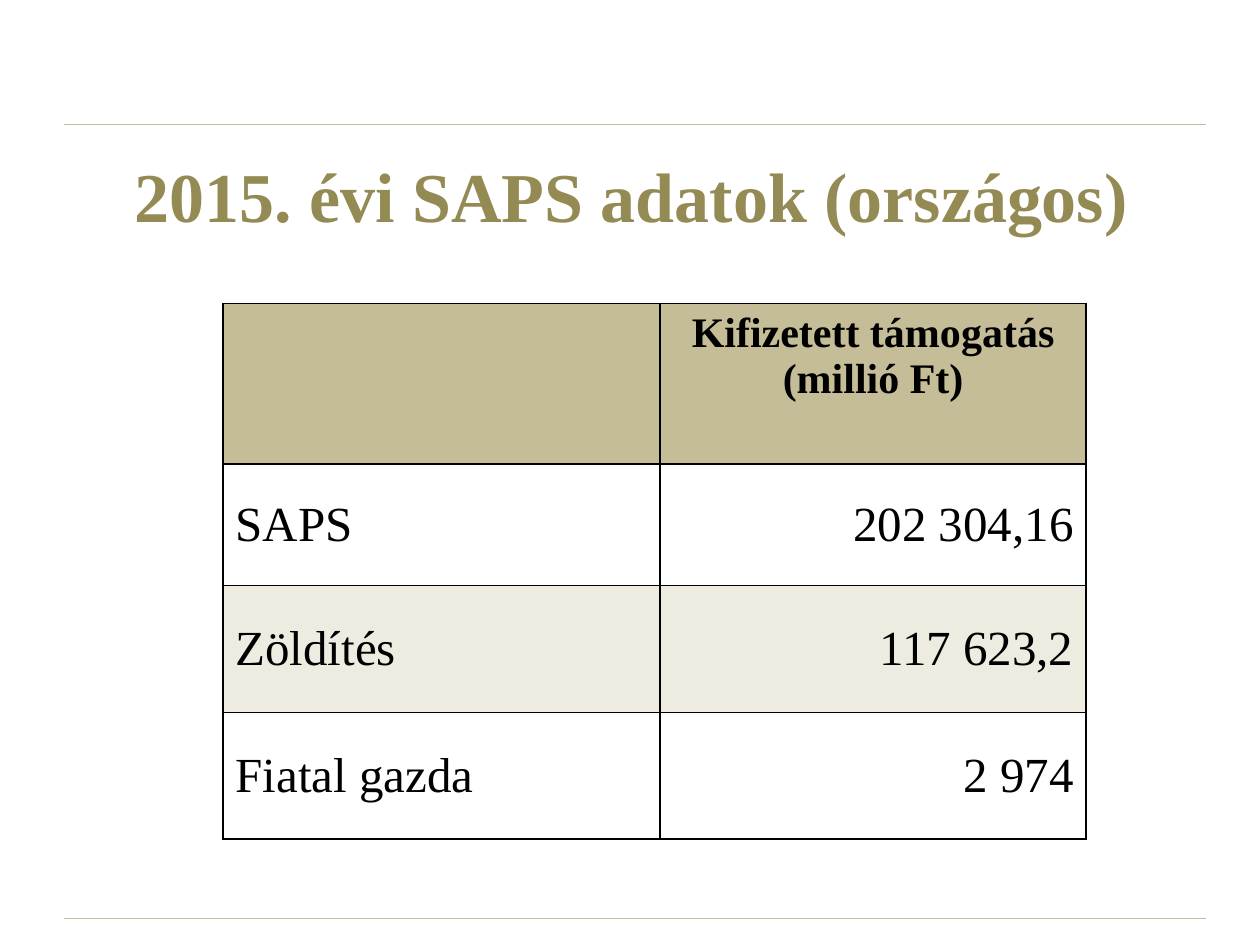
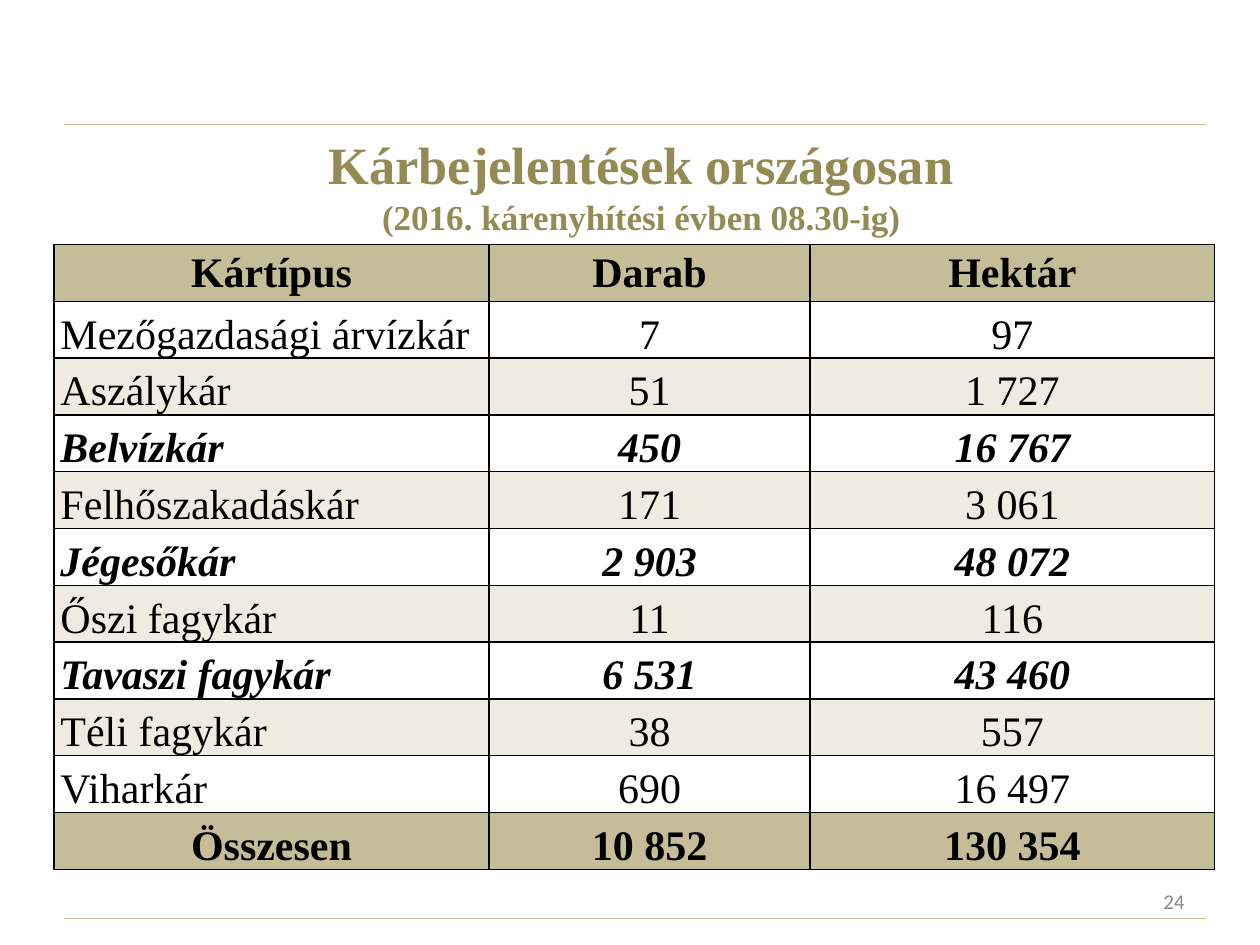
from dataclasses import dataclass

from lxml import etree
from pptx import Presentation
from pptx import util as u
from pptx.dml.color import RGBColor
from pptx.enum import shapes, text
from pptx.oxml import ns

LEFT, CENTER, RIGHT = text.PP_ALIGN.LEFT, text.PP_ALIGN.CENTER, text.PP_ALIGN.RIGHT
TOP, MIDDLE, BOTTOM = (text.MSO_ANCHOR.TOP, text.MSO_ANCHOR.MIDDLE,
                       text.MSO_ANCHOR.BOTTOM)


@dataclass(frozen=True)
class Theme:
    serif: str = "Times New Roman"
    sans: str = "Calibri"
    title: str = "948A54"
    band: str = "C4BD97"
    stripe: str = "EEECE1"
    ink: str = "000000"
    muted: str = "8C8C8C"
    title_size: int = 40
    damage_title_size: int = 30
    subtitle_size: int = 20
    body_size: int = 28
    table_size: int = 24
    number_size: int = 12
    rule_width: float = 0.75
    border_width: int = 1


@dataclass(frozen=True)
class CellLook:
    align: int
    anchor: int
    size: int
    bold: bool = False
    italic: bool = False
    fill: str = ""


THEME = Theme()
WIDTH, HEIGHT = u.Inches(10), u.Inches(7.5)
COLUMNS, ROWS = 100, 75
RULE_LEFT, RULE_RIGHT = 5.1, 95.7
RULE_ROWS = (9.9, 72.9)

PAYMENTS = [
    ("", "Kifizetett támogatás (millió Ft)"),
    ("SAPS", "202 304,16"),
    ("Zöldítés", "117 623,2"),
    ("Fiatal gazda", "2 974"),
]
DAMAGES = [
    ("Kártípus", "Darab", "Hektár"),
    ("Mezőgazdasági árvízkár", "7", "97"),
    ("Aszálykár", "51", "1 727"),
    ("Belvízkár", "450", "16 767"),
    ("Felhőszakadáskár", "171", "3 061"),
    ("Jégesőkár", "2 903", "48 072"),
    ("Őszi fagykár", "11", "116"),
    ("Tavaszi fagykár", "6 531", "43 460"),
    ("Téli fagykár", "38", "557"),
    ("Viharkár", "690", "16 497"),
    ("Összesen", "10 852", "130 354"),
]
LARGEST_DAMAGES = {3, 5, 7}


def across(columns):
    return round(WIDTH * columns / COLUMNS)


def down(rows):
    return round(HEIGHT * rows / ROWS)


def place(area):
    left, top, width, height = area
    return across(left), down(top), across(width), down(height)


def style_font(font, name, size, color, bold=False, italic=False):
    font.name, font.size = name, u.Pt(size)
    font.bold, font.italic = bold, italic
    font.color.rgb = RGBColor.from_string(color)


def add_rules(page):
    for row in RULE_ROWS:
        rule = page.shapes.add_connector(
            shapes.MSO_CONNECTOR.STRAIGHT,
            across(RULE_LEFT), down(row), across(RULE_RIGHT), down(row))
        rule.line.color.rgb = RGBColor.from_string(THEME.band)
        rule.line.width = u.Pt(THEME.rule_width)
        etree.SubElement(rule._element.spPr, ns.qn("a:effectLst"))


def add_label(page, area, align):
    frame = page.shapes.add_textbox(*place(area)).text_frame
    frame.word_wrap = True
    frame.vertical_anchor = MIDDLE
    para = frame.paragraphs[0]
    para.alignment = align
    return para


def add_title(page, area, lines):
    para = add_label(page, area, CENTER)
    for index, (line, size) in enumerate(lines):
        if index:
            para.add_line_break()
        span = para.add_run()
        span.text = line
        style_font(span.font, THEME.serif, size, THEME.title, bold=True)


def add_page_number(page, area, number):
    para = add_label(page, area, RIGHT)
    para.text = number
    style_font(para.font, THEME.sans, THEME.number_size, THEME.muted)


def add_borders(cell):
    properties = cell._tc.get_or_add_tcPr()
    for side in ("lnL", "lnR", "lnT", "lnB"):
        edge = etree.SubElement(properties, ns.qn(f"a:{side}"),
                                w=str(u.Pt(THEME.border_width)))
        fill = etree.SubElement(edge, ns.qn("a:solidFill"))
        etree.SubElement(fill, ns.qn("a:srgbClr"), val=THEME.ink)


def style_cell(cell, words, look):
    add_borders(cell)
    if look.fill:
        cell.fill.solid()
        cell.fill.fore_color.rgb = RGBColor.from_string(look.fill)
    else:
        cell.fill.background()
    cell.vertical_anchor = look.anchor
    para = cell.text_frame.paragraphs[0]
    para.text = words
    para.alignment = look.align
    style_font(para.font, THEME.serif, look.size, THEME.ink, look.bold, look.italic)


def add_grid(page, area, records, column_shares, row_shares, look_for, margins=None):
    left, top, width, height = place(area)
    table = page.shapes.add_table(
        len(records), len(column_shares), left, top, width, height).table
    table.first_row = table.horz_banding = False
    for column, share in zip(table.columns, column_shares):
        column.width = round(width * share / sum(column_shares))
    for row, share in zip(table.rows, row_shares):
        row.height = round(height * share / sum(row_shares))
    for r, record in enumerate(records):
        for c, words in enumerate(record):
            cell = table.cell(r, c)
            if margins:
                cell.margin_left = cell.margin_right = u.Inches(margins[0])
                cell.margin_top = cell.margin_bottom = u.Inches(margins[1])
            style_cell(cell, words, look_for(r, c))


def stripe_for(row):
    return "" if row % 2 else THEME.stripe


def payment_look(row, column):
    if row == 0:
        return CellLook(CENTER, TOP, THEME.table_size, bold=True, fill=THEME.band)
    return CellLook(RIGHT if column else LEFT, MIDDLE, THEME.body_size,
                    fill=stripe_for(row))


def damage_look(row, column):
    if row in (0, len(DAMAGES) - 1):
        return CellLook(CENTER, BOTTOM if row else MIDDLE, THEME.table_size,
                        bold=True, fill=THEME.band)
    largest = row in LARGEST_DAMAGES
    return CellLook(CENTER if column else LEFT, BOTTOM, THEME.table_size,
                    largest, largest, stripe_for(row))


def add_page(deck):
    page = deck.slides.add_slide(deck.slide_layouts[6])
    add_rules(page)
    return page


def build_payments(deck):
    page = add_page(deck)
    add_title(page, (5.1, 10.7, 90, 9.4),
              [("2015. évi SAPS adatok (országos)", THEME.title_size)])
    add_grid(page, (17.7, 24.1, 68.5, 42.5), PAYMENTS,
             (3.47, 3.38), (1.28, 0.97, 1.01, 1.01), payment_look)


def build_damages(deck):
    page = add_page(deck)
    add_grid(page, (4.3, 19.4, 92.1, 49.6), DAMAGES,
             (3.45, 2.55, 3.21), (1,) * len(DAMAGES), damage_look, (0.05, 0))
    add_title(page, (5.9, 10.7, 90, 7.9),
              [("Kárbejelentések országosan", THEME.damage_title_size),
               ("(2016. kárenyhítési évben 08.30-ig)", THEME.subtitle_size)])
    add_page_number(page, (71.7, 69.5, 23.3, 4), "24")


def main():
    deck = Presentation()
    deck.slide_width, deck.slide_height = WIDTH, HEIGHT
    build_payments(deck)
    build_damages(deck)
    deck.save("out.pptx")


if __name__ == "__main__":
    main()
